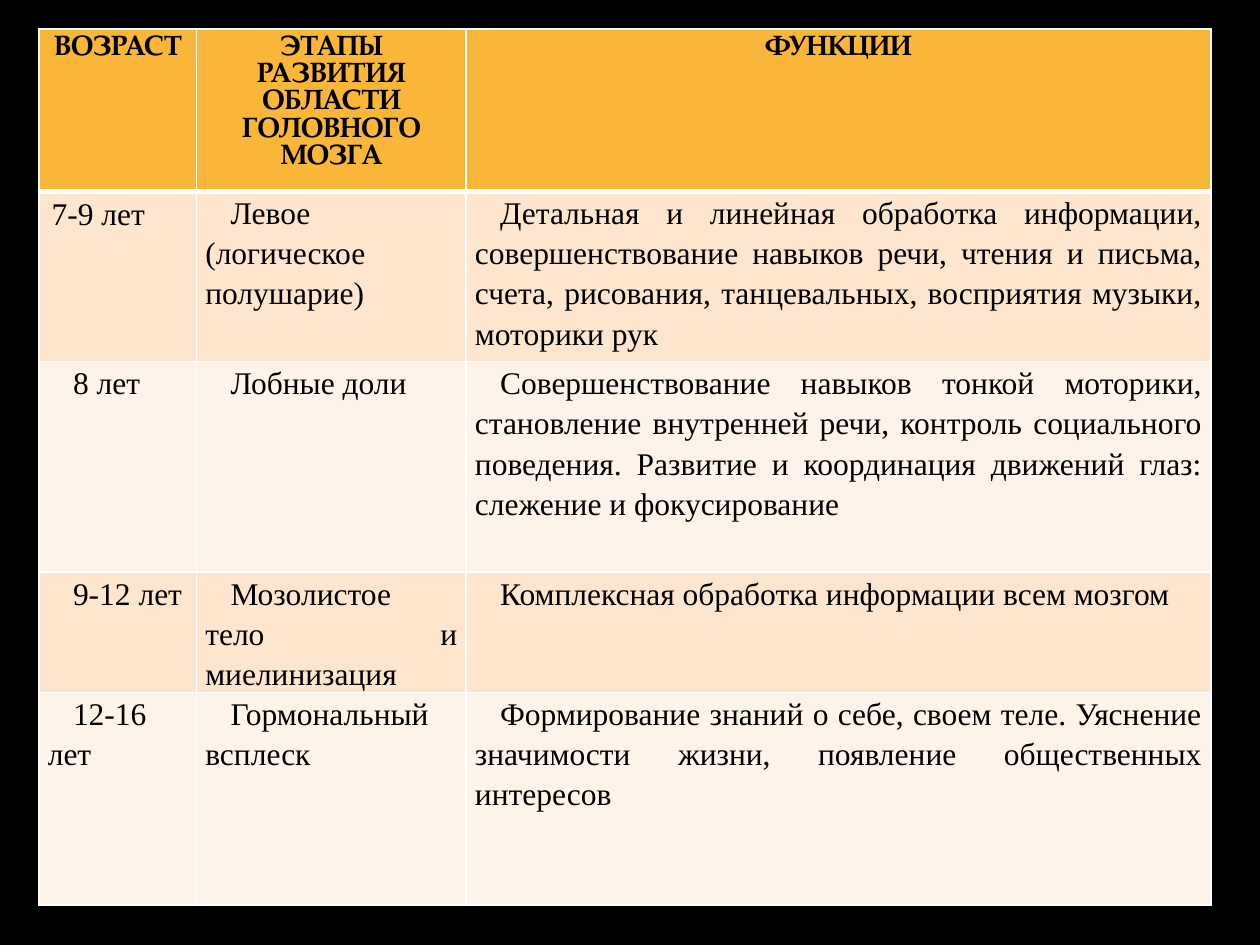
from pptx import Presentation
from pptx.dml.color import RGBColor
from pptx.enum.text import PP_ALIGN
from pptx.oxml.ns import qn
from pptx.util import Inches, Pt
from lxml.etree import SubElement

# Content
HEADER = ["ВОЗРАСТ", "ЭТАПЫ РАЗВИТИЯ ОБЛАСТИ ГОЛОВНОГО МОЗГА", "ФУНКЦИИ"]
STAGES = [
    ("7-9 лет", "Левое (логическое полушарие)",
     "Детальная и линейная обработка информации, совершенствование навыков речи, "
     "чтения и письма, счета, рисования, танцевальных, восприятия музыки, моторики рук"),
    ("8 лет", "Лобные доли",
     "Совершенствование навыков тонкой моторики, становление внутренней речи, "
     "контроль социального поведения. Развитие и координация движений глаз: "
     "слежение и фокусирование"),
    ("9-12 лет", "Мозолистое тело и миелинизация",
     "Комплексная обработка информации всем мозгом"),
    ("12-16 лет", "Гормональный всплеск",
     "Формирование знаний о себе, своем теле. Уяснение значимости жизни, "
     "появление общественных интересов"),
]
COL_WIDTHS = [1.25, 2.14, 5.91]
ROW_HEIGHTS = [1.29, 1.35, 1.67, 0.88, 1.69]
COLORS = {"back": "000000", "text": "000000", "border": "FFFFFF",
          "header": "F9B639", "odd": "FDE5CE", "even": "FEF3E8"}


def rgb(name):
    return RGBColor.from_string(COLORS[name])


def set_borders(cell, top=1, bottom=1):
    tc_pr = cell._tc.get_or_add_tcPr()
    for side, width in (("L", 1), ("R", 1), ("T", top), ("B", bottom)):
        ln = SubElement(tc_pr, qn(f"a:ln{side}"), w=str(Pt(width)))
        fill = SubElement(ln, qn("a:solidFill"))
        SubElement(fill, qn("a:srgbClr"), val=COLORS["border"])


def set_cell(cell, text, fill, font, size, bold=False):
    cell.fill.solid()
    cell.fill.fore_color.rgb = rgb(fill)
    p = cell.text_frame.paragraphs[0]
    p.text = text
    f = p.runs[0].font
    f.name, f.size, f.bold = font, Pt(size), bold
    f.color.rgb = rgb("text")
    return p


def justify(cell, p):
    cell.margin_left = cell.margin_right = Inches(0.07)
    cell.margin_top = cell.margin_bottom = 0
    p.alignment = PP_ALIGN.JUSTIFY
    p.line_spacing = 1.15
    p_pr = p._p.get_or_add_pPr()
    p_pr.set("marL", "0")
    p_pr.set("indent", str(Inches(0.2)))


# Slide
prs = Presentation()
prs.slide_width, prs.slide_height = Inches(10), Inches(7.5)
s = prs.slides.add_slide(prs.slide_layouts[6])
s.background.fill.solid()
s.background.fill.fore_color.rgb = rgb("back")

# Table grid
table = s.shapes.add_table(
    len(ROW_HEIGHTS), len(COL_WIDTHS), Inches(0.31), Inches(0.23),
    Inches(sum(COL_WIDTHS)), Inches(sum(ROW_HEIGHTS))).table
for col, width in zip(table.columns, COL_WIDTHS):
    col.width = Inches(width)
for row, height in zip(table.rows, ROW_HEIGHTS):
    row.height = Inches(height)

# Header row
for c, text in enumerate(HEADER):
    cell = table.cell(0, c)
    set_borders(cell, bottom=3)
    p = set_cell(cell, text, "header", "TeX Gyre Pagella", 16, bold=True)
    p.alignment = PP_ALIGN.CENTER

# Age stages; the first age keeps the default margins and alignment
for r, stage in enumerate(STAGES, start=1):
    for c, text in enumerate(stage):
        cell = table.cell(r, c)
        set_borders(cell, top=3 if r == 1 else 1)
        p = set_cell(cell, text, "odd" if r % 2 else "even", "Times New Roman", 18)
        if (r, c) != (1, 0):
            justify(cell, p)

prs.save("out.pptx")
